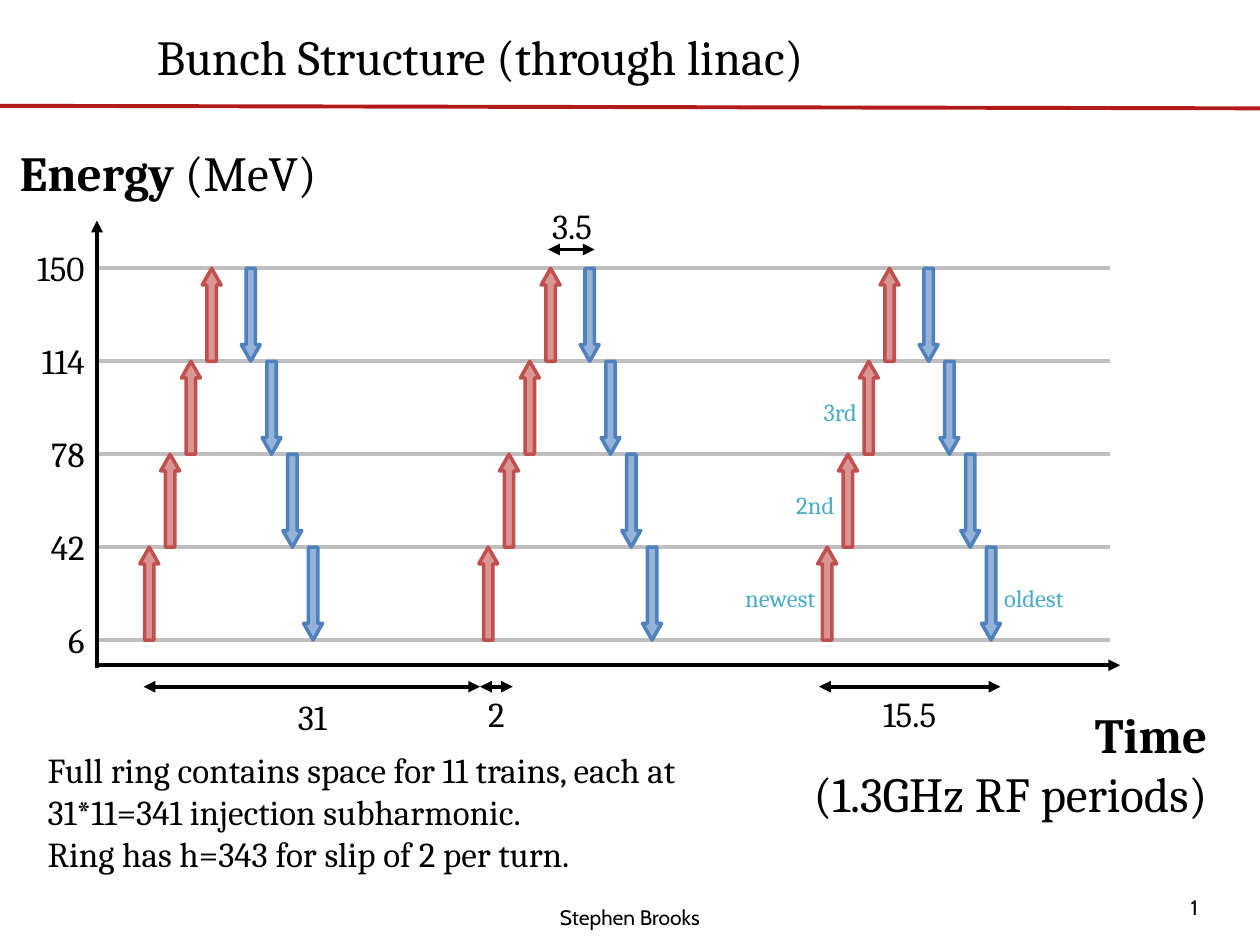
from lxml import etree
from pptx import Presentation
from pptx.dml.color import RGBColor
from pptx.enum.shapes import MSO_CONNECTOR, MSO_SHAPE
from pptx.enum.text import MSO_ANCHOR, MSO_AUTO_SIZE, PP_ALIGN
from pptx.oxml.ns import qn
from pptx.util import Inches, Pt

LEFT, CENTER, RIGHT = PP_ALIGN.LEFT, PP_ALIGN.CENTER, PP_ALIGN.RIGHT
GROW, TOP = MSO_AUTO_SIZE.SHAPE_TO_FIT_TEXT, MSO_ANCHOR.TOP
STRAIGHT, UP_ARROW = MSO_CONNECTOR.STRAIGHT, MSO_SHAPE.UP_ARROW

BLACK, RED, GRAY, TEAL = "000000", "B31B1B", "BFBFBF", "4BACC6"
UP_COLORS = ("D99694", "C0504D")
DOWN_COLORS = ("95B3D7", "4F81BD")

ENERGIES = (6, 42, 78, 114, 150)
AXIS_X, AXIS_Y = 0.77, 5.28
GRID_BOTTOM, GRID_RIGHT = 5.08, 8.81
ROW = 0.7375

TRAIN_LEFT, TRAIN_PITCH = 1.11, 2.69
ARROW_WIDTH, STEP, TURN = 0.15, 0.165, 0.31
SPAN_Y = 5.45


def color(value):
    return RGBColor.from_string(value)


def energy_y(level):
    return GRID_BOTTOM - level * ROW


def write(shape, lines, size, align, hue=BLACK, font="Cambria"):
    """Fill a shape with lines; a line is a list of (text, bold) spans."""
    frame = shape.text_frame
    frame.word_wrap = True
    frame.vertical_anchor = TOP
    for index, line in enumerate(lines):
        para = frame.add_paragraph() if index else frame.paragraphs[0]
        para.alignment = align
        for text, bold in line:
            span = para.add_run()
            span.text = text
            span.font.size, span.font.name, span.font.bold = Pt(size), font, bold
            span.font.color.rgb = color(hue)


def add_text(page, lines, left, top, width, height, size, align, **style):
    box = page.shapes.add_textbox(*map(Inches, (left, top, width, height)))
    if isinstance(lines, str):
        lines = [[(lines, False)]]
    write(box, lines, size, align, **style)
    box.text_frame.auto_size = GROW


def add_line(page, start, end, hue=BLACK, heads=()):
    """Draw a line; heads holds the tags of the ends that get a triangle."""
    line = page.shapes.add_connector(STRAIGHT, *map(Inches, start + end))
    line.line.color.rgb = color(hue)
    line.line.width = Pt(2.25)
    for tag in heads:
        etree.SubElement(line.line._get_or_add_ln(), qn(tag), type="triangle")
    etree.SubElement(line._element.spPr, qn("a:effectLst"))


def add_span(page, left, right, y, label, label_center, label_top, label_width):
    add_line(page, (left, y), (right, y), heads=("a:headEnd", "a:tailEnd"))
    add_text(page, label, label_center - label_width / 2, label_top,
             label_width, 0.44, 20, CENTER)


def add_pass(group, left, level, colors, rotation):
    """Draw one linac pass between an energy level and the next."""
    arrow = group.shapes.add_shape(UP_ARROW, Inches(left), Inches(energy_y(level + 1)),
                                   Inches(ARROW_WIDTH), Inches(ROW))
    arrow.adjustments[0], arrow.adjustments[1] = 0.5, 0.881
    arrow.rotation = rotation
    arrow.shadow.inherit = False
    fill, outline = colors
    arrow.fill.solid()
    arrow.fill.fore_color.rgb = color(fill)
    arrow.line.color.rgb = color(outline)
    arrow.line.width = Pt(2)


def add_train(page, left):
    """Draw a bunch train climbing to the top energy and back down."""
    group = page.shapes.add_group_shape()
    passes = len(ENERGIES) - 1
    top_left = left + (passes - 1) * STEP
    for level in range(passes):
        add_pass(group, left + level * STEP, level, UP_COLORS, 0)
    for step in range(passes):
        add_pass(group, top_left + TURN + step * STEP, passes - 1 - step, DOWN_COLORS, 180)


def add_title(page, text):
    title = page.shapes.title
    title.left, title.top, title.width, title.height = map(Inches, (0.06, 0.16, 7.5, 0.57))
    write(title, [[(text, False)]], 28, CENTER)
    title.text_frame.auto_size = GROW


def add_axes(page):
    add_line(page, (0.75, AXIS_Y), (8.89, AXIS_Y), heads=("a:tailEnd",))
    for level, energy in enumerate(ENERGIES):
        y = energy_y(level)
        add_line(page, (AXIS_X, y), (GRID_RIGHT, y), GRAY)
        add_text(page, str(energy), -0.06, y - 0.22, 0.83, 0.44, 20, RIGHT)
    add_line(page, (AXIS_X, 5.3), (AXIS_X, 1.75), heads=("a:tailEnd",))
    add_text(page, [[("Energy", True), (" (MeV)", False)]], 0.06, 1.08, 2.81, 0.57, 28, LEFT)
    add_text(page, [[("Time", True)], [("(1.3GHz RF periods)", False)]],
             5.78, 5.54, 3.9, 1.04, 28, RIGHT)


def add_spans(page):
    add_span(page, 3.81, 4.07, SPAN_Y, "2", 3.94, 5.45, 0.41)
    add_span(page, 4.35, 4.72, 1.98, "3.5", 4.54, 1.57, 0.62)
    add_span(page, 1.14, 3.81, SPAN_Y, "31", 2.48, 5.47, 0.6)
    add_span(page, 6.5, 7.94, SPAN_Y, "15.5", 7.22, 5.45, 0.74)


def add_bunch_labels(page):
    for text, left, level, width, align in (
        ("newest", 5.68, 0, 0.89, RIGHT),
        ("2nd", 6.11, 1, 0.61, RIGHT),
        ("3rd", 6.29, 2, 0.61, RIGHT),
        ("oldest", 7.87, 0, 0.89, LEFT),
    ):
        add_text(page, text, left, energy_y(level) - 0.5, width, 0.34, 14, align, hue=TEAL)


def main():
    deck = Presentation()
    deck.slide_width, deck.slide_height = Inches(10), Inches(7.5)
    page = deck.slides.add_slide(deck.slide_layouts[5])
    add_text(page, "Stephen Brooks", 3.71, 7.13, 2.58, 0.3, 12, CENTER, font="Cabin")
    add_line(page, (0, 0.84), (10, 0.86), RED)
    add_text(page, "1", 9.35, 7.05, 0.65, 0.3, 12, LEFT, font="Cabin")
    add_title(page, "Bunch Structure (through linac)")
    add_axes(page)
    for train in range(3):
        add_train(page, TRAIN_LEFT + train * TRAIN_PITCH)
    add_spans(page)
    notes = ("Full ring contains space for 11 trains, each at 31*11=341 injection subharmonic.",
             "Ring has h=343 for slip of 2 per turn.")
    add_text(page, [[(note, False)] for note in notes], 0.28, 5.89, 5.57, 1.11, 20, LEFT)
    add_bunch_labels(page)
    deck.save("out.pptx")


if __name__ == "__main__":
    main()
